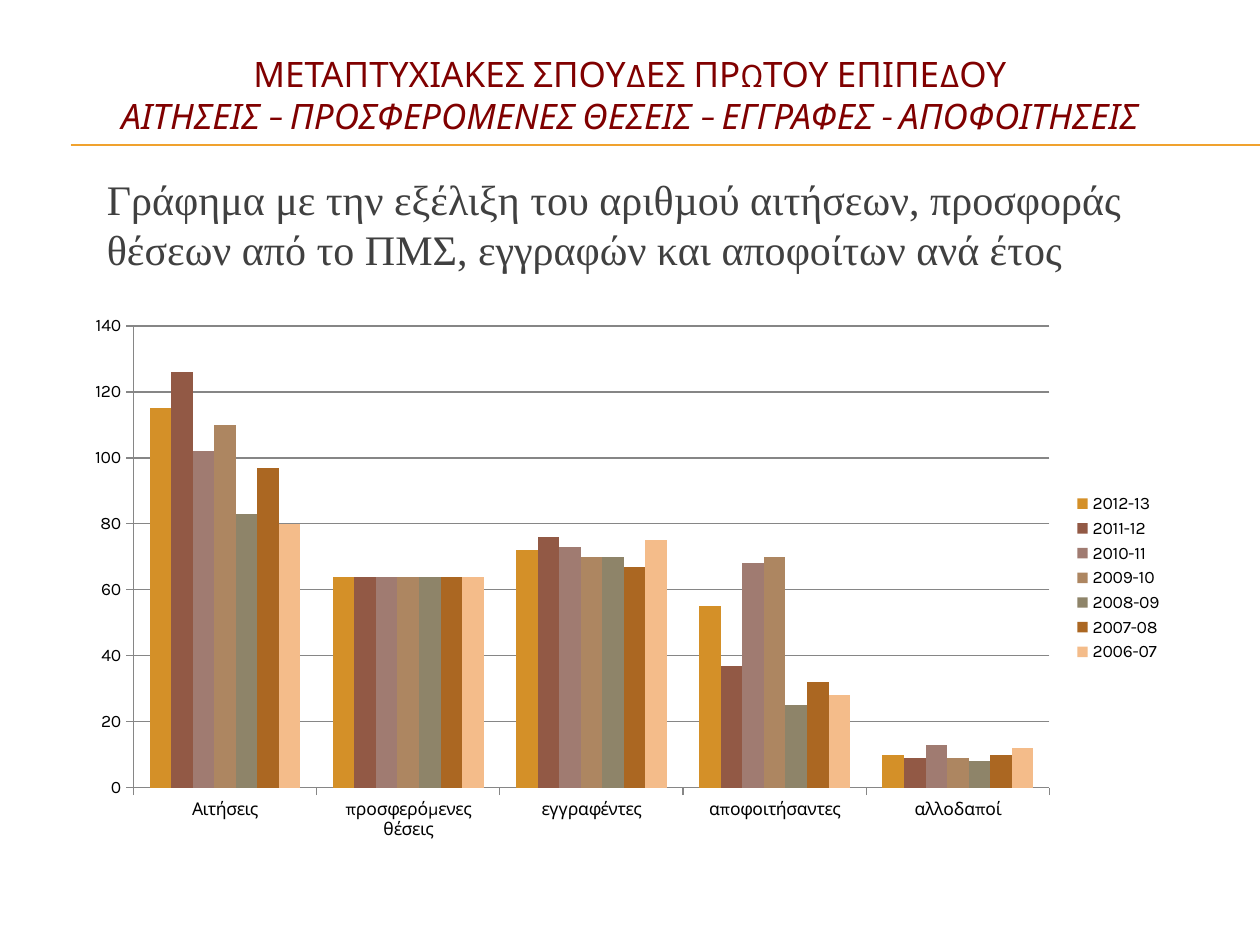
from lxml.etree import SubElement
from pptx import Presentation
from pptx.chart.data import CategoryChartData
from pptx.dml.color import RGBColor
from pptx.enum.chart import XL_CHART_TYPE as ChartType, XL_LEGEND_POSITION as LegendPosition
from pptx.enum.chart import XL_TICK_MARK as TickMark
from pptx.enum.shapes import MSO_CONNECTOR as Connector
from pptx.enum.text import MSO_ANCHOR as Anchor, PP_ALIGN as Align
from pptx.oxml.ns import qn
from pptx.util import Inches, Pt

COLORS = {
    "title": "800000", "body": "404040", "rule": "F0A22E",
    "chart_text": "000000", "axis": "868686",
    "2012-13": "D49028", "2011-12": "925945", "2010-11": "A07B71",
    "2009-10": "AD8661", "2008-09": "8E8469", "2007-08": "AB6722",
    "2006-07": "F4BC8A",
}
CATEGORIES = ["Αιτήσεις", "προσφερόμενες θέσεις", "εγγραφέντες", "αποφοιτήσαντες", "αλλοδαποί"]
YEARS = {
    "2012-13": (115, 64, 72, 55, 10),
    "2011-12": (126, 64, 76, 37, 9),
    "2010-11": (102, 64, 73, 68, 13),
    "2009-10": (110, 64, 70, 70, 9),
    "2008-09": (83, 64, 70, 25, 8),
    "2007-08": (97, 64, 67, 32, 10),
    "2006-07": (80, 64, 75, 28, 12),
}


def color(name):
    return RGBColor.from_string(COLORS[name])


def box_of(presentation, left, top, width, height):
    across, down = presentation.slide_width, presentation.slide_height
    return int(left * across), int(top * down), int(width * across), int(height * down)


def style_font(font, name, size, color_name):
    font.name = name
    font.size = Pt(size)
    font.color.rgb = color(color_name)


def add_title(slide, box):
    title = slide.shapes.title
    title.left, title.top, title.width, title.height = box
    frame = title.text_frame
    frame.text = "ΜΕΤΑΠΤΥΧΙΑΚΕΣ ΣΠΟΥΔΕΣ ΠΡΩΤΟΥ ΕΠΙΠΕΔΟΥ\vΑΙΤΗΣΕΙΣ – ΠΡΟΣΦΕΡΟΜΕΝΕΣ ΘΕΣΕΙΣ – ΕΓΓΡΑΦΕΣ - ΑΠΟΦΟΙΤΗΣΕΙΣ"
    frame.vertical_anchor = Anchor.MIDDLE
    paragraph = frame.paragraphs[0]
    paragraph.alignment = Align.CENTER
    paragraph.space_after = Pt(12)
    for run in paragraph.runs:
        style_font(run.font, "Karla", 20, "title")
    paragraph.runs[-1].font.italic = True


def add_rules(slide, box):
    left, top, width, gap = box
    for y in (top, top + gap):
        rule = slide.shapes.add_connector(Connector.STRAIGHT, left, y, left + width, y)
        rule.line.color.rgb = color("rule")
        rule.line.width = Pt(0.75)
        SubElement(rule._element.spPr, qn("a:effectLst"))


def add_description(slide, box):
    frame = slide.shapes.add_textbox(*box).text_frame
    frame.word_wrap = True
    frame.text = "Γράφημα με την εξέλιξη του αριθµού αιτήσεων, προσφοράς θέσεων από το ΠΜΣ, εγγραφών και αποφοίτων ανά έτος"
    style_font(frame.paragraphs[0].runs[0].font, "Times New Roman", 24, "body")


def add_year_chart(slide, box):
    data = CategoryChartData()
    data.categories = CATEGORIES
    for year, values in YEARS.items():
        data.add_series(year, values)
    chart = slide.shapes.add_chart(ChartType.COLUMN_CLUSTERED, *box, data).chart
    style_font(chart.font, "Karla", 10, "chart_text")
    chart.has_title = False
    chart.has_legend = True
    chart.legend.position = LegendPosition.RIGHT
    chart.legend.include_in_layout = False
    plot = chart.plots[0]
    plot.gap_width = 150
    plot.overlap = 0
    plot.vary_by_categories = False
    for series in plot.series:
        series.format.fill.solid()
        series.format.fill.fore_color.rgb = color(series.name)
    value_axis = chart.value_axis
    value_axis.minimum_scale, value_axis.maximum_scale = 0, 140
    value_axis.major_unit = 20
    value_axis.has_major_gridlines = True
    value_axis.major_gridlines.format.line.color.rgb = color("axis")
    for axis in (chart.category_axis, value_axis):
        axis.major_tick_mark = TickMark.OUTSIDE
        axis.format.line.color.rgb = color("axis")


def main():
    presentation = Presentation()
    presentation.slide_width, presentation.slide_height = Inches(10), Inches(7.5)
    slide = presentation.slides.add_slide(presentation.slide_layouts[5])
    add_rules(slide, box_of(presentation, 0.056, 0.153, 0.944, 0.001))
    add_title(slide, box_of(presentation, 0.025, 0.033, 0.95, 0.133))
    add_year_chart(slide, box_of(presentation, 0.058, 0.323, 0.875, 0.577))
    add_description(slide, box_of(presentation, 0.075, 0.177, 0.858, 0.121))
    presentation.save("out.pptx")


if __name__ == "__main__":
    main()
